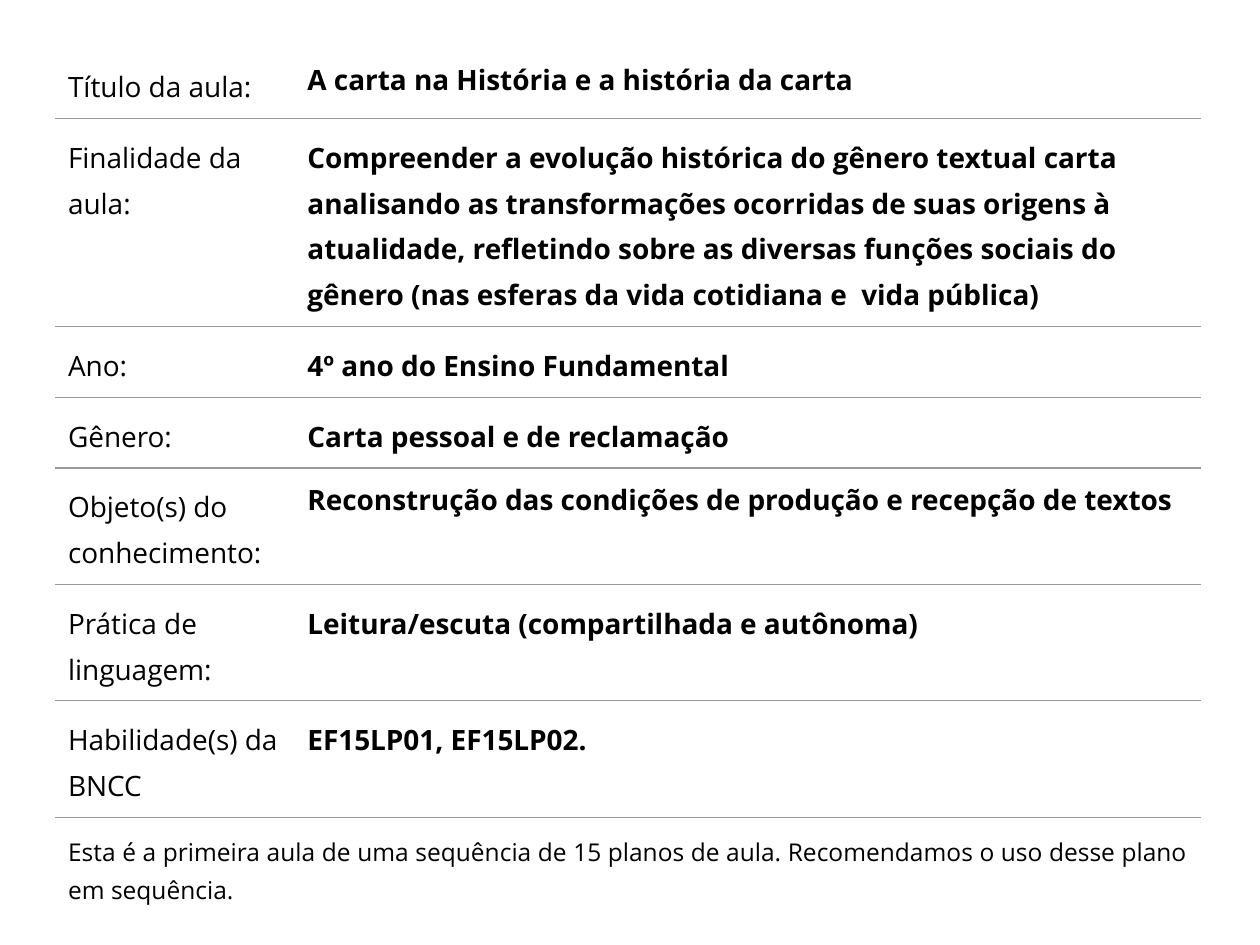
from pptx import Presentation
from pptx.dml.color import RGBColor as RGB
from pptx.enum.text import PP_ALIGN as Align
from pptx.util import Inches, Pt
from lxml.etree import SubElement as Sub
from pptx.oxml.ns import qn

BLACK = RGB(0, 0, 0)
WHITE = RGB(255, 255, 255)
GRAY = RGB(0x99, 0x99, 0x99)
FONT = "Open Sans"
COLS = (1.9, 2.43, 2.19, 2.57)
ROW = 0.42

FACTS = [
    ("Título da aula:", "A carta na História e a história da carta", False),
    ("Finalidade da aula:",
     "Compreender a evolução histórica do gênero textual carta analisando as "
     "transformações ocorridas de suas origens à atualidade, refletindo sobre "
     "as diversas funções sociais do gênero (nas esferas da vida cotidiana e  "
     "vida pública)", True),
    ("Ano:", "4º ano do Ensino Fundamental", True),
    ("Gênero:", "Carta pessoal e de reclamação", True),
    ("Objeto(s) do conhecimento:",
     "Reconstrução das condições de produção e recepção de textos", False),
    ("Prática de linguagem:", "Leitura/escuta (compartilhada e autônoma)", True),
    ("Habilidade(s) da BNCC", "EF15LP01, EF15LP02.", True),
]
NOTE = ("Esta é a primeira aula de uma sequência de 15 planos de aula. "
        "Recomendamos o uso desse plano em sequência.")


def edge(cell, side, color=None):
    line = Sub(cell._tc.get_or_add_tcPr(), qn("a:ln" + side), w=str(Pt(0.75)))
    if color is None:
        Sub(line, qn("a:noFill"))
    else:
        fill = Sub(line, qn("a:solidFill"))
        Sub(fill, qn("a:srgbClr"), val=str(color))


def frame(cell, top, base):
    for side, color in (("L", None), ("R", None), ("T", top), ("B", base)):
        edge(cell, side, color)
    cell.fill.background()
    cell.margin_left = cell.margin_right = Inches(0.1)
    cell.margin_top = cell.margin_bottom = Inches(0.1)


def write(cell, text, size=16, bold=False, lead=None, gap=0):
    para = cell.text_frame.paragraphs[0]
    para.text = text
    para.space_before = para.space_after = Pt(gap)
    if lead:
        para.line_spacing = lead
    font = para.runs[0].font
    font.name, font.size, font.bold = FONT, Pt(size), bold
    font.color.rgb = BLACK
    return para


def add_facts(slide, left, top):
    count = len(FACTS) + 1
    table = slide.shapes.add_table(
        count, len(COLS), Inches(left), Inches(top),
        Inches(sum(COLS)), Inches(ROW * count)).table
    table.first_row = table.horz_banding = False
    for col, width in zip(table.columns, COLS):
        col.width = Inches(width)

    last = count - 1
    for row in range(count):
        for col in range(len(COLS)):
            frame(table.cell(row, col), GRAY if row else None,
                  WHITE if row == last else GRAY)

    for row, (label, value, airy) in enumerate(FACTS):
        table.cell(row, 1).merge(table.cell(row, 3))
        write(table.cell(row, 0), label, lead=1.2, gap=3)
        space = {"lead": 1.2, "gap": 3} if airy else {}
        write(table.cell(row, 1), value, bold=True, **space)

    table.cell(last, 0).merge(table.cell(last, 3))
    para = write(table.cell(last, 0), NOTE, size=14, lead=1.15)
    para.alignment = Align.JUSTIFY


def main():
    deck = Presentation()
    deck.slide_width, deck.slide_height = Inches(10), Inches(7.5)
    slide = deck.slides.add_slide(deck.slide_layouts[6])
    add_facts(slide, 0.44, 0.38)
    deck.save("out.pptx")


if __name__ == "__main__":
    main()
